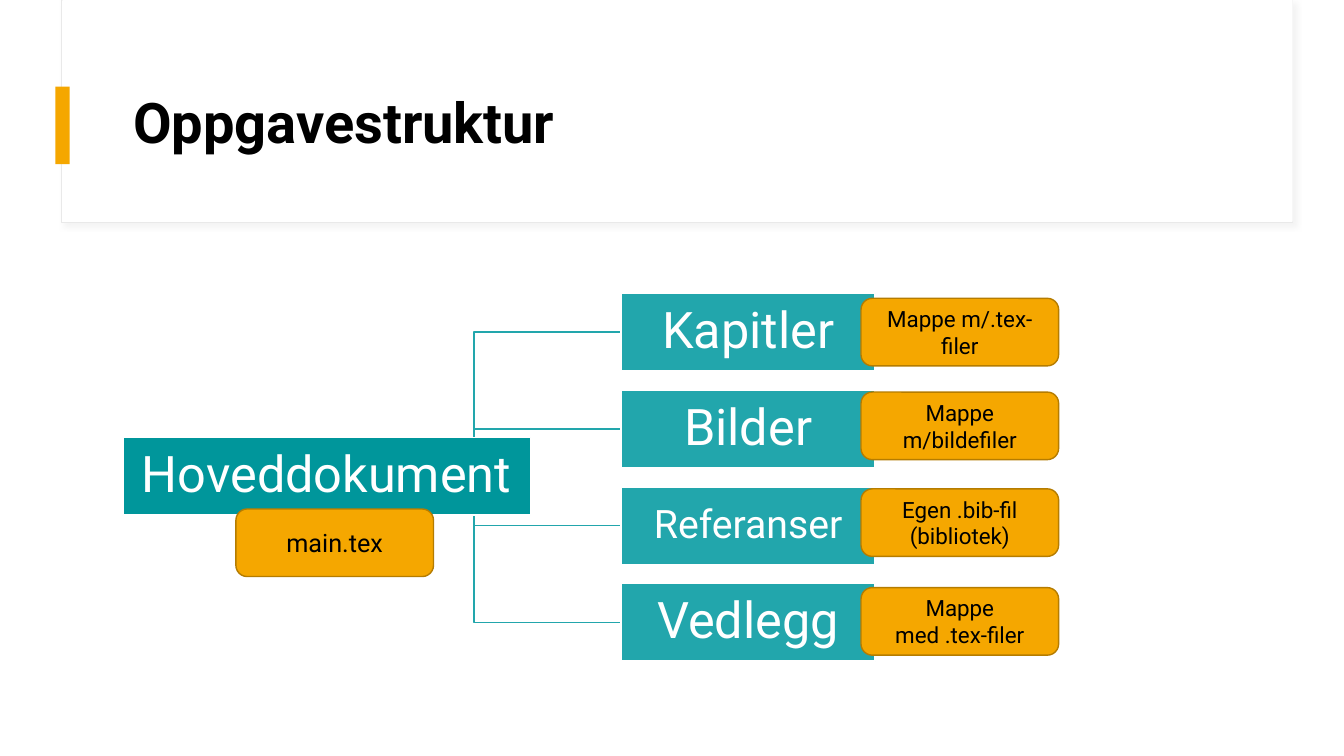
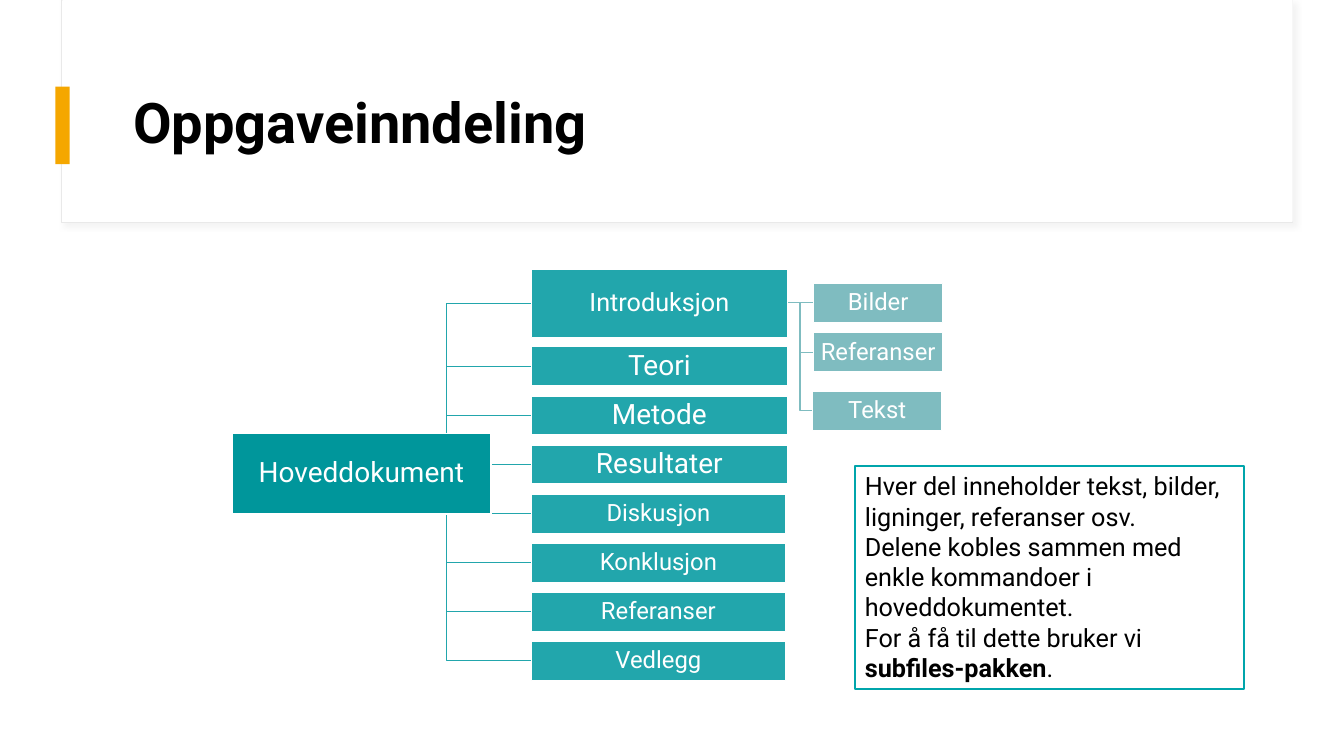
from lxml.etree import SubElement
from pptx import Presentation
from pptx.dml.color import RGBColor
from pptx.enum.shapes import MSO_CONNECTOR, MSO_SHAPE
from pptx.enum.text import MSO_ANCHOR, MSO_AUTO_SIZE, PP_ALIGN
from pptx.oxml.ns import qn
from pptx.util import Inches, Pt

FONT = "Roboto"
BLACK, WHITE, GREY = "000000", "FFFFFF", "E9E9E9"
GOLD, BROWN = "F5A700", "B57C00"
DARK, TEAL, PALE, EDGE = "00969B", "22A6AC", "7FBCC0", "00A5AB"
TITLE = (1.22, 0.6, 11.12, 1.29)


def paint(form, tone):
    """Set a fill or font colour from a hex string."""
    if hasattr(form, "solid"):
        form.solid()
        form = form.fore_color
    form.rgb = RGBColor.from_string(tone)


def place(shape, box):
    """Move a shape to a box in inches."""
    shape.left, shape.top, shape.width, shape.height = map(Inches, box)


def write(para, text, size, tone, bold=False):
    """Add one run to a paragraph."""
    run = para.add_run()
    run.text = text
    run.font.name, run.font.size, run.font.bold = FONT, Pt(size), bold
    paint(run.font.color, tone)


def block(slide, kind, box, fill, line=None, width=1):
    """Draw one filled shape."""
    shape = slide.shapes.add_shape(kind, *map(Inches, box))
    shape.shadow.inherit = False
    paint(shape.fill, fill)
    if line:
        paint(shape.line.fill, line)
        shape.line.width = Pt(width)
    else:
        shape.line.fill.background()
    return shape


def label(shape, text, size, tone, side, space=1):
    """Centre one line of text in a shape."""
    frame = shape.text_frame
    frame.word_wrap = True
    frame.vertical_anchor = MSO_ANCHOR.MIDDLE
    frame.margin_left = frame.margin_right = Inches(side)
    frame.margin_top = frame.margin_bottom = Inches(0.01)
    para = frame.paragraphs[0]
    para.alignment, para.line_spacing = PP_ALIGN.CENTER, space
    write(para, text, size, tone)


def node(slide, box, text, size, fill):
    """Draw one box of a tree."""
    shape = block(slide, MSO_SHAPE.RECTANGLE, box, fill, WHITE)
    label(shape, text, size, WHITE, 0.01, 0.9)


def note(slide, left, top, text, size=16):
    """Draw one rounded gold note."""
    box = (left, top, 1.96, 0.67)
    shape = block(slide, MSO_SHAPE.ROUNDED_RECTANGLE, box, GOLD, BROWN)
    label(shape, text, size, BLACK, 0.21)


def link(slide, start, box, tone):
    """Join a point to the left side of a box."""
    end = (box[0], box[1] + box[3] / 2)
    flat = abs(end[1] - start[1]) < 0.02
    kind = MSO_CONNECTOR.STRAIGHT if flat else MSO_CONNECTOR.ELBOW
    stop = (end[0], start[1]) if flat else end
    line = slide.shapes.add_connector(kind, *map(Inches, start + stop))
    paint(line.line.fill, tone)
    line.line.width = Pt(1)
    SubElement(line.element.spPr, qn("a:effectLst"))


def branch(slide, start, kids, tone):
    """Draw links from a point, then the boxes they lead to."""
    for box, text, size in kids:
        link(slide, start, box, tone)
    for box, text, size in kids:
        node(slide, box, text, size, tone)


def tree(slide, root, text, size, kids):
    """Draw a root box with its branch."""
    left, top, width, height = root
    branch(slide, (left + width / 2, top + height / 2), kids, TEAL)
    node(slide, root, text, size, DARK)


def shade(shape):
    """Give a shape a soft shadow."""
    shadow = SubElement(shape.element.spPr.find(qn("a:effectLst")), qn("a:outerShdw"),
                        blurRad=str(Pt(4)), dist=str(Pt(3)), dir="2700000")
    tint = SubElement(shadow, qn("a:srgbClr"), val="D9D9D9")
    SubElement(tint, qn("a:alpha"), val="30000")


def dress(layout, slide):
    """Put the header band and title place on the layout."""
    kind = MSO_SHAPE.RECTANGLE
    band = block(slide, kind, (0.61, 0, 12.21, 2.21), WHITE, GREY, 0.75)
    shade(band)
    face = block(slide, kind, (0.62, 0, 12.2, 2.2), WHITE)
    mark = block(slide, kind, (0.55, 0.86, 0.14, 0.77), GOLD)
    for spot, shape in enumerate((band, face, mark)):
        shape.element.nvSpPr.cNvPr.set("id", str(50 + spot))
        layout.shapes.element.insert(2 + spot, shape.element)
    place(layout.placeholders[0], TITLE)


def head(slide, text):
    """Fill the title."""
    title = slide.shapes.title
    place(title, TITLE)
    frame = title.text_frame
    frame.auto_size = MSO_AUTO_SIZE.NONE
    frame.vertical_anchor = MSO_ANCHOR.MIDDLE
    para = frame.paragraphs[0]
    para.alignment, para.line_spacing = PP_ALIGN.LEFT, 0.9
    write(para, text, 40, BLACK, True)


def panel(slide, box, paras):
    """Draw an outlined text box of paragraphs made of runs."""
    shape = slide.shapes.add_textbox(*map(Inches, box))
    paint(shape.line.fill, EDGE)
    shape.line.width = Pt(1.5)
    frame = shape.text_frame
    frame.word_wrap = True
    for spot, runs in enumerate(paras):
        para = frame.add_paragraph() if spot else frame.paragraphs[0]
        for text, bold in runs:
            write(para, text, 18, BLACK, bold)


def files(slide):
    """Build the slide on the files of a thesis."""
    head(slide, "Oppgavestruktur")
    rows = [("Kapitler", 36, 2.96, "Mappe m/.tex-filer"),
            ("Bilder", 36, 3.89, "Mappe m/bildefiler"),
            ("Referanser", 28, 4.85, "Egen .bib-fil (bibliotek)"),
            ("Vedlegg", 36, 5.83, "Mappe med .tex-filer")]
    kids = [((6.16, 2.91 + 0.96 * spot, 2.52, 0.77), text, size)
            for spot, (text, size, *rest) in enumerate(rows)]
    tree(slide, (1.22, 4.34, 4.04, 0.77), "Hoveddokument", 36, kids)
    note(slide, 2.34, 5.05, "main.tex", 18)
    for *rest, top, text in rows:
        note(slide, 8.54, top, text)


def parts(slide):
    """Build the slide on the parts of a thesis."""
    head(slide, "Oppgaveinndeling")
    leaves = [((8.07, 2.81, 1.28, 0.39), "Bilder", 17),
              ((8.07, 3.3, 1.28, 0.39), "Referanser", 17),
              ((8.06, 3.88, 1.28, 0.39), "Tekst", 17)]
    branch(slide, (7.81, 3), leaves, PALE)
    rows = [("Teori", 2.54, 20), ("Metode", 2.54, 20), ("Resultater", 2.54, 20),
            ("Diskusjon", 2.52, 17), ("Konklusjon", 2.52, 17),
            ("Referanser", 2.52, 17), ("Vedlegg", 2.52, 17)]
    step = (6.36 - 3.44) / (len(rows) - 1)
    kids = [((5.27, 2.67, 2.54, 0.68), "Introduksjon", 18)]
    kids += [((5.27, 3.44 + step * spot, width, 0.39), text, size)
             for spot, (text, width, size) in enumerate(rows)]
    tree(slide, (2.3, 4.3, 2.57, 0.8), "Hoveddokument", 20, kids)
    panel(slide, (8.48, 4.62, 3.86, 2.22), [
        [("Hver del inneholder tekst, bilder, ligninger, referanser osv.", False)],
        [("Delene kobles sammen med enkle kommandoer i hoveddokumentet.", False)],
        [("For å få til dette bruker vi ", False), ("subfiles-pakken", True), (".", False)]])


def main():
    """Build and save the deck."""
    deck = Presentation()
    deck.slide_width, deck.slide_height = Inches(13.33), Inches(7.5)
    layout = deck.slide_layouts[5]
    first, second = [deck.slides.add_slide(layout) for turn in range(2)]
    dress(layout, first)
    files(first)
    parts(second)
    deck.save("out.pptx")


if __name__ == "__main__":
    main()
